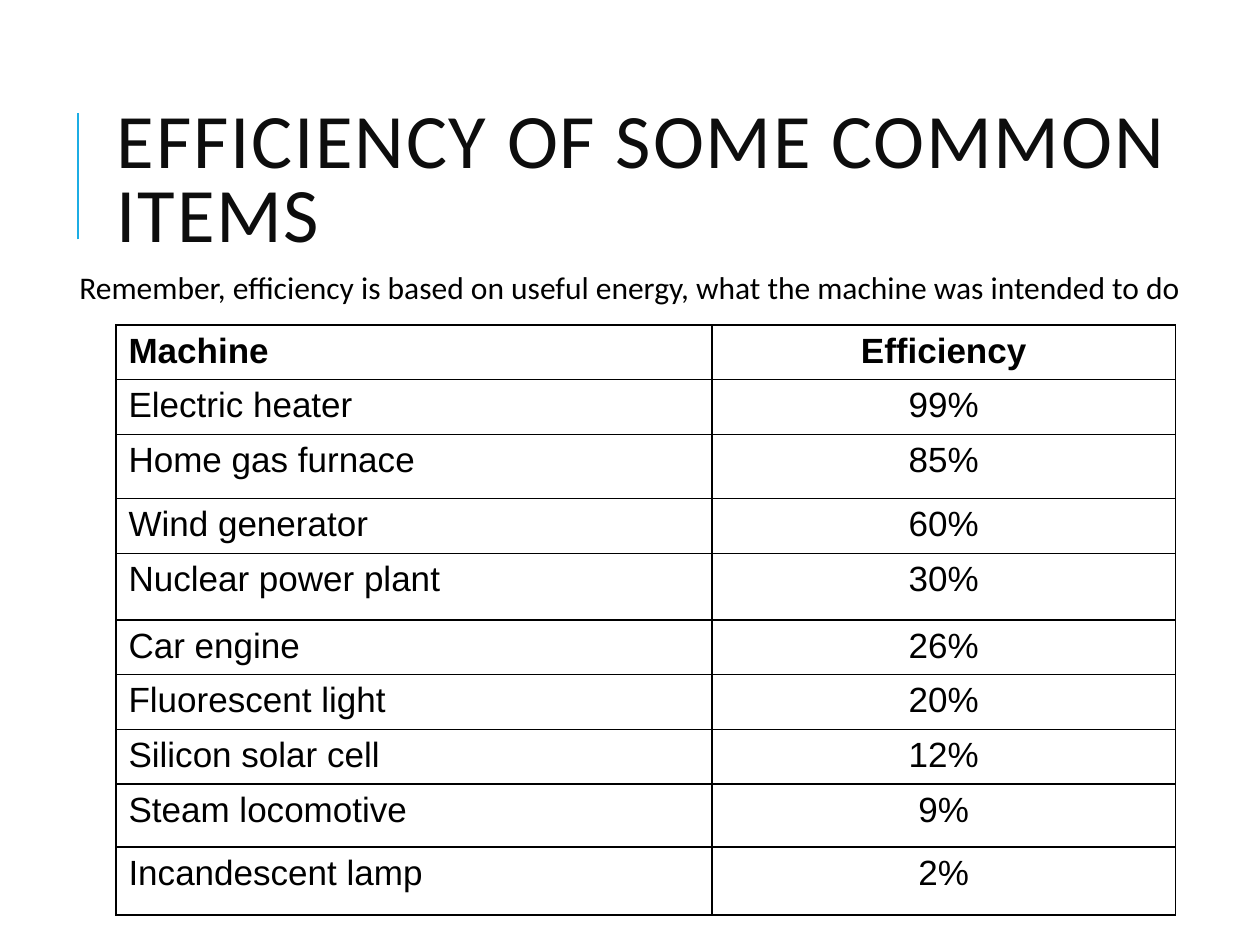
from lxml.etree import SubElement
from pptx import Presentation
from pptx.dml.color import RGBColor
from pptx.enum.shapes import MSO_CONNECTOR
from pptx.enum.text import MSO_ANCHOR, PP_ALIGN
from pptx.oxml.ns import qn
from pptx.util import Inches, Pt

ROWS = [
    ("Machine", "Efficiency", 0.41),
    ("Electric heater", "99%", 0.41),
    ("Home gas furnace", "85%", 0.51),
    ("Wind generator", "60%", 0.41),
    ("Nuclear power plant", "30%", 0.53),
    ("Car engine", "26%", 0.41),
    ("Fluorescent light", "20%", 0.41),
    ("Silicon solar cell", "12%", 0.41),
    ("Steam locomotive", "9%", 0.5),
    ("Incandescent lamp", "2%", 0.54),
]


def color(code):
    return RGBColor.from_string(code)


class Deck:
    """Holds the style and the current slide."""

    ink = "000000"
    dark = "0D0D0D"
    accent = "1CADE4"
    head = "Calibri"
    body = "Arial"

    def __init__(self):
        self.show = Presentation()
        self.show.slide_width = Inches(10)
        self.show.slide_height = Inches(7.5)
        self.slide = self.show.slides.add_slide(self.show.slide_layouts[6])

    def style(self, para, face, size, code, bold=False):
        for run in para.runs:
            font = run.font
            font.name, font.size, font.bold = face, Pt(size), bold
            font.color.rgb = color(code)

    def line(self, start, end, width):
        rule = self.slide.shapes.add_connector(
            MSO_CONNECTOR.STRAIGHT, *map(Inches, start + end))
        rule.line.color.rgb = color(self.accent)
        rule.line.width = Pt(width)
        SubElement(rule._element.spPr, qn("a:effectLst"))

    def text(self, words, place, size, code):
        box = self.slide.shapes.add_textbox(*map(Inches, place))
        frame = box.text_frame
        frame.word_wrap = True
        frame.text = words
        para = frame.paragraphs[0]
        self.style(para, self.head, size, code)
        return frame, para

    def title(self, words, place):
        frame, para = self.text(words, place, 44, self.dark)
        frame.vertical_anchor = MSO_ANCHOR.MIDDLE
        para.line_spacing = 0.8
        para.runs[0]._r.get_or_add_rPr().set("spc", "100")

    def note(self, words, place):
        para = self.text(words, place, 18, self.ink)[1]
        para.alignment = PP_ALIGN.CENTER

    def border(self, cell):
        props = cell._tc.get_or_add_tcPr()
        for side in ("lnL", "lnR", "lnT", "lnB"):
            edge = SubElement(props, qn(f"a:{side}"), w=str(Pt(1)))
            fill = SubElement(edge, qn("a:solidFill"))
            SubElement(fill, qn("a:srgbClr"), val=self.ink)

    def cell(self, cell, words, align, bold):
        cell.text = words
        para = cell.text_frame.paragraphs[0]
        para.alignment = align
        props = para._p.get_or_add_pPr()
        props.set("marL", str(Inches(0.38)))
        props.set("indent", str(-Inches(0.38)))
        self.style(para, self.body, 20, self.ink, bold)
        self.border(cell)
        cell.fill.background()

    def table(self, rows, left, top, widths):
        high = sum(row[-1] for row in rows)
        place = map(Inches, (left, top, sum(widths), high))
        grid = self.slide.shapes.add_table(
            len(rows), len(widths), *place).table
        grid.first_row = grid.horz_banding = False
        for col, width in zip(grid.columns, widths):
            col.width = Inches(width)
        aligns = (PP_ALIGN.LEFT, PP_ALIGN.CENTER)
        for i, (*words, height) in enumerate(rows):
            grid.rows[i].height = Inches(height)
            for j, word in enumerate(words):
                self.cell(grid.cell(i, j), word, aligns[j], i == 0)


def main():
    deck = Deck()
    deck.line((0.62, 1.9), (0.62, 0.9), 1.5)
    deck.title("EFFICIENCY OF SOME COMMON ITEMS", (0.83, 0.83, 8.67, 1.25))
    deck.table(ROWS, 0.92, 2.58, (4.73, 3.68))
    deck.note("Remember, efficiency is based on useful energy, "
              "what the machine was intended to do", (0.25, 2.08, 9.5, 0.4))
    deck.show.save("out.pptx")


if __name__ == "__main__":
    main()
